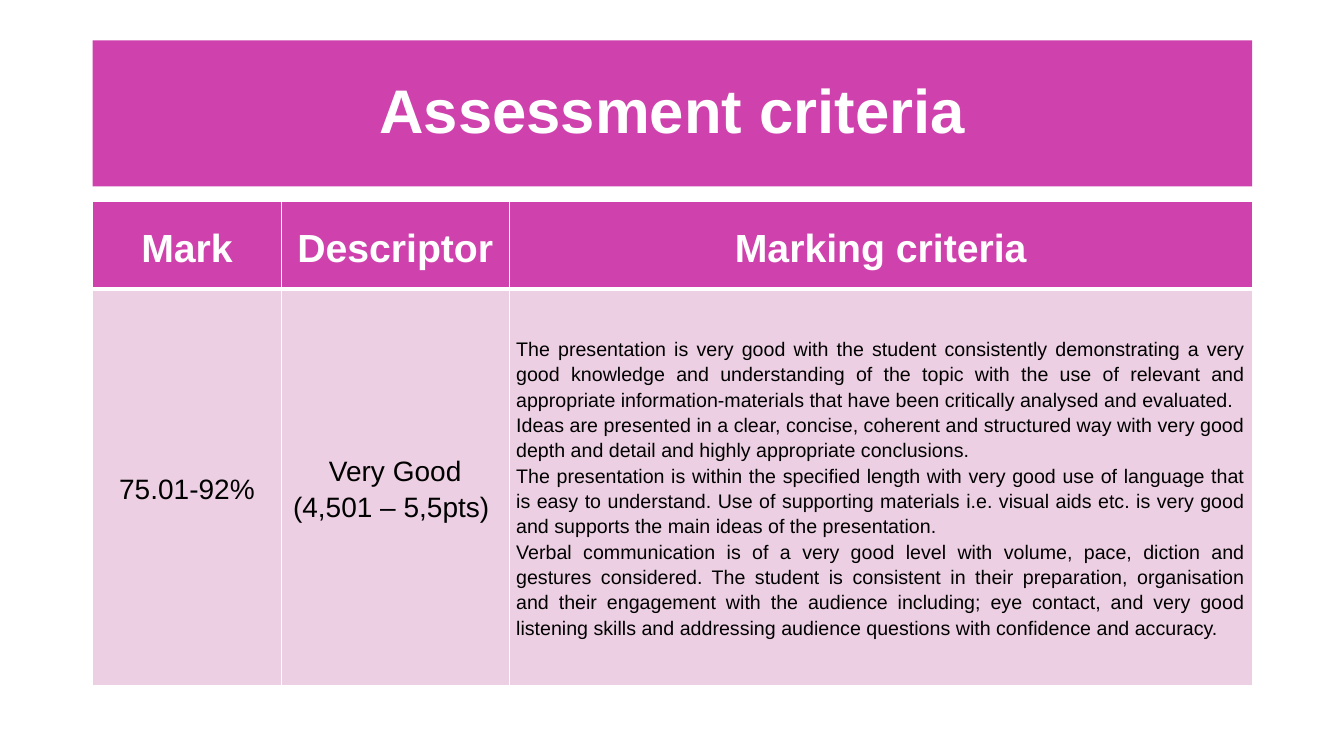
from lxml.etree import SubElement
from pptx import Presentation
from pptx.dml.color import RGBColor
from pptx.enum.shapes import MSO_SHAPE
from pptx.enum.text import MSO_ANCHOR, PP_ALIGN
from pptx.oxml.ns import qn
from pptx.util import Inches, Pt

MAGENTA = RGBColor(0xCF, 0x41, 0xAD)
PINK = RGBColor(0xED, 0xCF, 0xE3)
WHITE = RGBColor(0xFF, 0xFF, 0xFF)
BLACK = RGBColor(0x00, 0x00, 0x00)

LEFT = Inches(0.92)
COLUMN_WIDTHS = [1.87, 2.26, 7.37]
ROW_HEIGHTS = [0.87, 3.93]
WIDTH = Inches(sum(COLUMN_WIDTHS))

HEADINGS = [["Mark"], ["Descriptor"], ["Marking criteria"]]
VERY_GOOD = [
    ["75.01-92%"],
    ["Very Good", "(4,501 – 5,5pts) "],
    [
        "The presentation is very good with the student consistently demonstrating "
        "a very good knowledge and understanding of the topic with the use of "
        "relevant and appropriate information-materials that have been critically "
        "analysed and evaluated. ",
        "Ideas are presented in a clear, concise, coherent and structured way with "
        "very good depth and detail and highly appropriate conclusions. ",
        "The presentation is within the specified length with very good use of "
        "language that is easy to understand. Use of supporting materials i.e. "
        "visual aids etc. is very good and supports the main ideas of the "
        "presentation.",
        "Verbal communication is of a very good level with volume, pace, diction "
        "and gestures considered. The student is consistent in their preparation, "
        "organisation and their engagement with the audience including; eye "
        "contact, and very good listening skills and addressing audience questions "
        "with confidence and accuracy.",
    ],
]


def write(frame, lines, size, color, bold, spacing, align=PP_ALIGN.CENTER):
    for number, line in enumerate(lines):
        para = frame.add_paragraph() if number else frame.paragraphs[0]
        para.alignment = align
        para.line_spacing = spacing
        span = para.add_run()
        span.text = line
        span.font.name = "Arial"
        span.font.size = Pt(size)
        span.font.bold = bold
        span.font.color.rgb = color


def add_borders(cell, widths):
    properties = cell._tc.get_or_add_tcPr()
    for position, (side, width) in enumerate(widths.items()):
        line = SubElement(properties, qn(f"a:ln{side}"), w=str(Pt(width)))
        fill = SubElement(line, qn("a:solidFill"))
        SubElement(fill, qn("a:srgbClr"), val=str(WHITE))
        properties.insert(position, line)  # borders come before the cell fill


deck = Presentation()
deck.slide_width, deck.slide_height = Inches(13.33), Inches(7.5)
page = deck.slides.add_slide(deck.slide_layouts[6])

# Title banner
banner = page.shapes.add_shape(
    MSO_SHAPE.RECTANGLE, LEFT, Inches(0.4), WIDTH, Inches(1.45))
banner.shadow.inherit = False
banner.fill.solid()
banner.fill.fore_color.rgb = MAGENTA
banner.line.fill.background()
banner.text_frame.word_wrap = True
banner.text_frame.vertical_anchor = MSO_ANCHOR.MIDDLE
write(banner.text_frame, ["Assessment criteria"], 44, WHITE, True, 0.9)

# Criteria table
table = page.shapes.add_table(
    len(ROW_HEIGHTS), len(COLUMN_WIDTHS), LEFT, Inches(2),
    WIDTH, Inches(sum(ROW_HEIGHTS))).table
for column, width in zip(table.columns, COLUMN_WIDTHS):
    column.width = Inches(width)
for row, height in zip(table.rows, ROW_HEIGHTS):
    row.height = Inches(height)

for row_number, row_texts in enumerate([HEADINGS, VERY_GOOD]):
    is_header = row_number == 0
    for column_number, lines in enumerate(row_texts):
        cell = table.cell(row_number, column_number)
        cell.fill.solid()
        cell.fill.fore_color.rgb = MAGENTA if is_header else PINK
        cell.vertical_anchor = MSO_ANCHOR.MIDDLE
        cell.margin_left = cell.margin_right = Inches(0.07)
        cell.margin_top = cell.margin_bottom = 0
        # The rule between header and body is thicker than the others
        add_borders(cell, {"L": 1, "R": 1, "T": 1 if is_header else 3,
                           "B": 3 if is_header else 1})
        if is_header:
            write(cell.text_frame, lines, 28, WHITE, True, 1.15)
        elif column_number < 2:
            write(cell.text_frame, lines, 20, BLACK, False, 1.15)
        else:
            write(cell.text_frame, lines, 14, BLACK, False, 1.15, PP_ALIGN.JUSTIFY)

deck.save("out.pptx")
